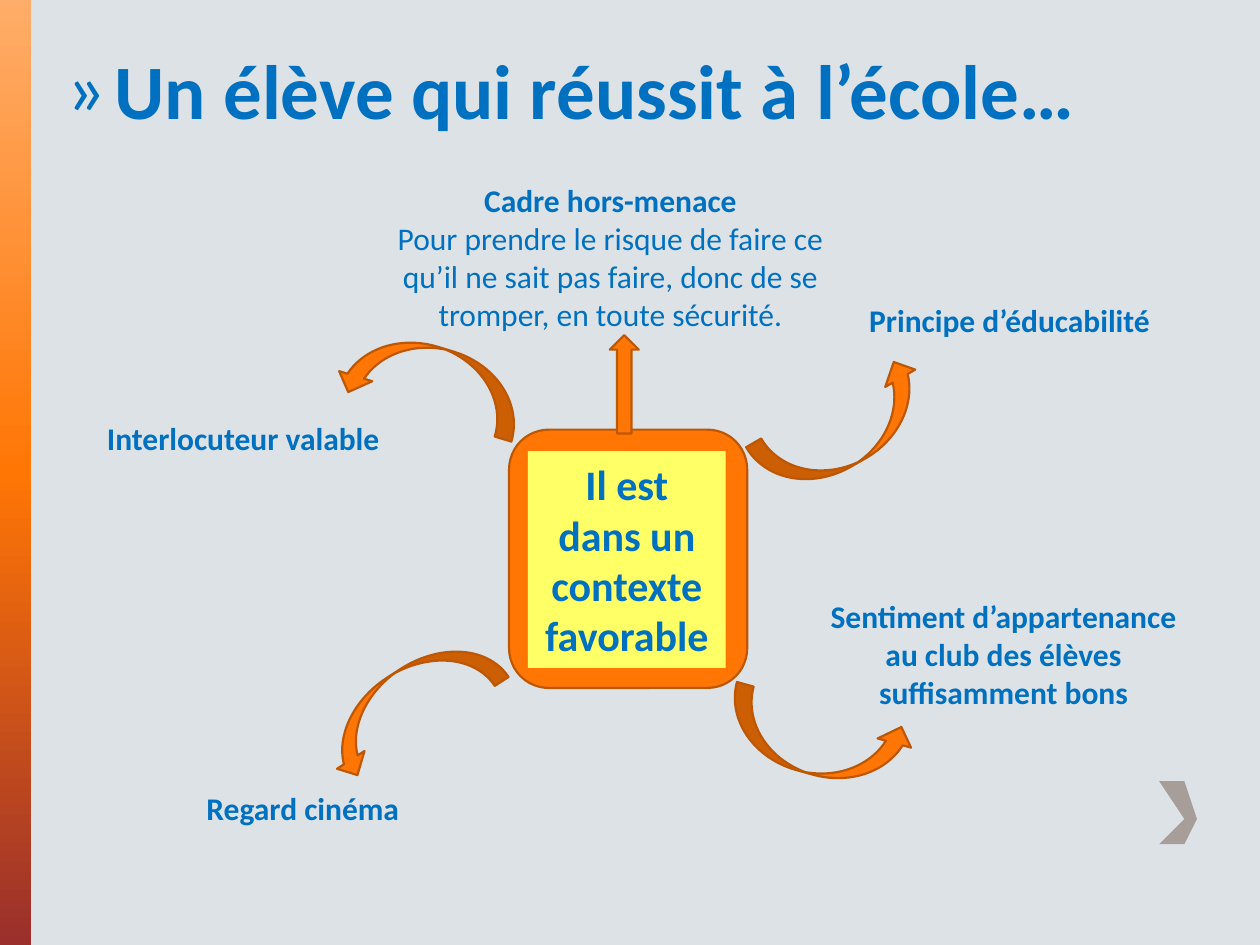
"""Build the slide about the favourable context of a successful pupil."""
from dataclasses import dataclass

from lxml import etree
from pptx import Presentation
from pptx.dml.color import RGBColor
from pptx.enum import shapes, text
from pptx.oxml import ns
from pptx.util import Emu, Inches, Pt

COLS, ROWS = 100, 75
CELL = Inches(10) // COLS
FONT, BLUE, ORANGE, RUST = "Calibri", "0070C0", "FF7605", "BD5704"
YELLOW, GREY, PALE = "FFFF66", "A79D99", "DDE2E7"
LEFT, CENTER = text.PP_ALIGN.LEFT, text.PP_ALIGN.CENTER
MSO = shapes.MSO_SHAPE


@dataclass(frozen=True)
class Box:
    """A rectangle in grid columns and rows."""
    col: float
    row: float
    cols: float
    rows: float

    def emu(self) -> list[Emu]:
        """Return left, top, width and height as lengths."""
        return [Emu(round(v * CELL)) for v in (self.col, self.row, self.cols, self.rows)]


@dataclass(frozen=True)
class Arrow:
    """An arrow leaving the central frame."""
    box: Box
    angle: float = 0
    kind: MSO = MSO.CURVED_RIGHT_ARROW


@dataclass(frozen=True)
class Label:
    """A text whose first paragraph is bold."""
    box: Box
    lines: tuple[str, ...]
    align: text.PP_ALIGN = LEFT
    size: float = 18


TITLE = Label(Box(4.3, 2.9, 94.1, 10.9), ("Un élève qui réussit à l’école…",), size=44)
CORE = Label(Box(41.9, 35.8, 15.7, 17.2), ("Il est dans un contexte favorable",), CENTER, 24)
FRAME = Box(40.4, 34.1, 18.9, 20.5)
BAR = Box(0, 0, 2.5, ROWS)
CHEVRON = ((93.5, 62.5), (92.4, 62.5), (94, 64.9), (92.4, 67.2), (93.5, 67.2), (95.1, 64.9))

ARROWS = (
    Arrow(Box(31.5, 22.8, 5.5, 14.9), 106.9),
    Arrow(Box(64.3, 26.7, 5.5, 14.9), 240),
    Arrow(Box(62.2, 51.3, 5.5, 14.9), 285.3),
    Arrow(Box(29.8, 48, 5.2, 15.6), 57),
    Arrow(Box(48.4, 26.6, 2.3, 7.8), kind=MSO.UP_ARROW),
)

LABELS = (
    Label(Box(7.5, 32.8, 26.8, 4), ("Interlocuteur valable",)),
    Label(Box(15.4, 62.1, 18.1, 4), ("Regard cinéma",)),
    Label(Box(68, 23.4, 26.8, 4), ("Principe d’éducabilité",)),
    Label(Box(64.8, 46.9, 29.7, 10.1),
          ("Sentiment d’appartenance au club des élèves suffisamment bons",), CENTER),
    Label(Box(28.9, 13.9, 39.1, 13.1),
          ("Cadre hors-menace",
           "Pour prendre le risque de faire ce qu’il ne sait pas faire, "
           "donc de se tromper, en toute sécurité."), CENTER),
)


def rgb(value: str) -> RGBColor:
    """Turn a hex string into a colour."""
    return RGBColor.from_string(value)


def paint(sp, fill: str, line: str | None = None) -> None:
    """Give a shape a solid fill, an optional outline and no shadow."""
    sp.shadow.inherit = False
    sp.fill.solid()
    sp.fill.fore_color.rgb = rgb(fill)
    if line:
        sp.line.color.rgb = rgb(line)
        sp.line.width = Pt(1.25)
    else:
        sp.line.fill.background()


def add_shape(slide, kind: MSO, box: Box, fill: str, line: str | None = None):
    """Add a painted preset shape."""
    sp = slide.shapes.add_shape(kind, *box.emu())
    paint(sp, fill, line)
    return sp


def write(sp, label: Label) -> None:
    """Fill a shape with the paragraphs of a label."""
    tf = sp.text_frame
    tf.word_wrap = True
    tf.text = "\n".join(label.lines)
    for i, p in enumerate(tf.paragraphs):
        p.alignment = label.align
        for r in p.runs:
            r.font.name, r.font.size, r.font.bold = FONT, Pt(label.size), i == 0
            r.font.color.rgb = rgb(BLUE)


def add_label(slide, label: Label):
    """Add a label as a text box."""
    sp = slide.shapes.add_textbox(*label.box.emu())
    write(sp, label)
    return sp


def add_bullet(p, char: str, indent: float) -> None:
    """Give a paragraph a hanging bullet."""
    props = p._p.get_or_add_pPr()
    props.set("marL", str(Inches(indent)))
    props.set("indent", str(-Inches(indent)))
    etree.SubElement(props, ns.qn("a:buFont")).set("typeface", FONT)
    etree.SubElement(props, ns.qn("a:buChar")).set("char", char)


def add_bar(slide) -> None:
    """Add the vertical gradient bar on the left edge."""
    sp = add_shape(slide, MSO.RECTANGLE, BAR, ORANGE)
    sp.fill.gradient()
    sp.fill.gradient_angle = 270
    grad = sp._element.spPr.find(ns.qn("a:gradFill"))
    stops = grad.find(ns.qn("a:gsLst"))
    for stop in list(stops):
        stops.remove(stop)
    for share, color in ((0, "FFAD69"), (50, ORANGE), (100, "9A2F2C")):
        stop = etree.SubElement(stops, ns.qn("a:gs"), pos=str(share * 1000))
        etree.SubElement(stop, ns.qn("a:srgbClr"), val=color)


def add_chevron(slide) -> None:
    """Add the grey chevron in the lower right corner."""
    start, *rest = CHEVRON
    builder = slide.shapes.build_freeform(*start, scale=CELL)
    builder.add_line_segments(rest, close=True)
    paint(builder.convert_to_shape(), GREY)


def main() -> None:
    """Draw the slide and save it."""
    prs = Presentation()
    prs.slide_width, prs.slide_height = COLS * CELL, ROWS * CELL
    slide = prs.slides.add_slide(prs.slide_layouts[6])
    slide.background.fill.solid()
    slide.background.fill.fore_color.rgb = rgb(PALE)
    add_bar(slide)
    add_chevron(slide)
    add_bullet(add_label(slide, TITLE).text_frame.paragraphs[0], "»", 0.38)
    add_shape(slide, MSO.FLOWCHART_ALTERNATE_PROCESS, FRAME, ORANGE, RUST)
    write(add_shape(slide, MSO.RECTANGLE, CORE.box, YELLOW), CORE)
    for arrow in ARROWS:
        add_shape(slide, arrow.kind, arrow.box, ORANGE, RUST).rotation = arrow.angle
    for label in LABELS:
        add_label(slide, label)
    prs.save("out.pptx")


if __name__ == "__main__":
    main()
